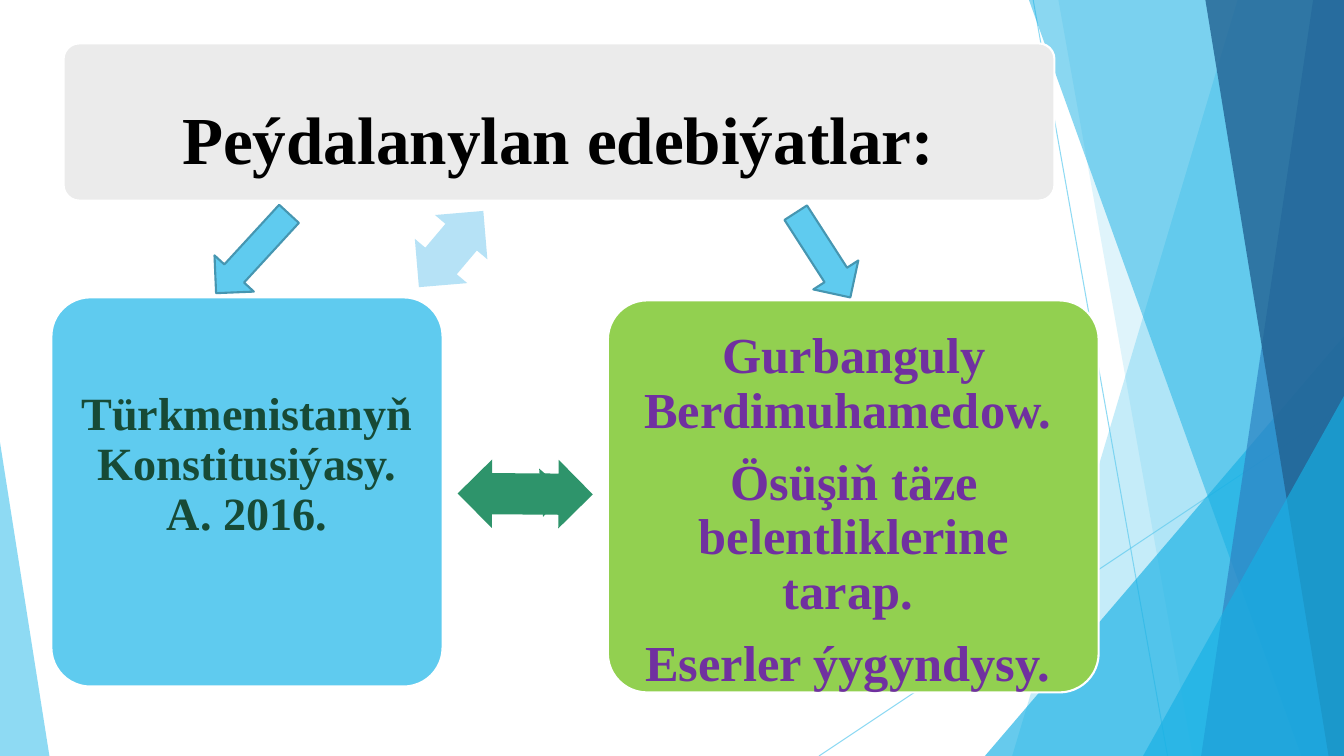
"""Builds the literature slide: a heading above two linked reference cards."""
from dataclasses import dataclass

from lxml import etree
from pptx import Presentation
from pptx.dml.color import RGBColor
from pptx.enum.shapes import MSO_CONNECTOR, MSO_SHAPE
from pptx.enum.text import MSO_ANCHOR, MSO_AUTO_SIZE, PP_ALIGN
from pptx.oxml.ns import qn
from pptx.util import Pt

ROUND = MSO_SHAPE.ROUNDED_RECTANGLE
TRIANGLE = MSO_SHAPE.ISOSCELES_TRIANGLE
DOUBLE_ARROW = MSO_SHAPE.LEFT_RIGHT_ARROW
DOWN_ARROW = MSO_SHAPE.DOWN_ARROW
STRAIGHT = MSO_CONNECTOR.STRAIGHT
TOP = MSO_ANCHOR.TOP
NO_FIT = MSO_AUTO_SIZE.NONE
CENTER = PP_ALIGN.CENTER
WIDTH, HEIGHT = 960, 540


@dataclass(frozen=True)
class Theme:
    """Colours, font and type sizes."""
    font: str = "Times New Roman"
    sky: str = "5FCBEF"
    azure: str = "17B0E4"
    blue: str = "2E83C3"
    navy: str = "226292"
    grey: str = "EBEBEB"
    white: str = "FFFFFF"
    lime: str = "92D050"
    green: str = "2E946B"
    pale: str = "B6E2F6"
    outline: str = "4696B1"
    black: str = "000000"
    forest: str = "174A36"
    purple: str = "7030A0"
    title_size: int = 48
    left_size: int = 33
    right_size: int = 36


class SlideBuilder:
    """Draws styled elements on one slide."""

    def __init__(self, s, theme):
        """Keep the slide and its theme."""
        self.s = s
        self.theme = theme

    def paint(self, fill, color, alpha=100):
        """Apply a solid colour with an opacity in percent."""
        fill.solid()
        fill.fore_color.rgb = RGBColor.from_string(color)
        if alpha < 100:
            clr = fill._xPr.find(".//" + qn("a:srgbClr"))
            etree.SubElement(clr, qn("a:alpha"), val=str(alpha * 1000))

    def finish(self, sp, color, alpha=100, line=None):
        """Set the fill and outline of a shape."""
        sp.shadow.inherit = False
        self.paint(sp.fill, color, alpha)
        if line:
            self.paint(sp.line.fill, line)
            sp.line.width = Pt(1.5)
        else:
            sp.line.fill.background()

    def shape(self, kind, box, color, alpha=100, line=None, adj=(), rot=0):
        """Add a preset shape."""
        sp = self.s.shapes.add_shape(kind, *map(Pt, box))
        for i, value in enumerate(adj):
            sp.adjustments[i] = value
        sp.rotation = rot
        self.finish(sp, color, alpha, line)

    def stripe(self, top_x, bottom_x, color, alpha):
        """Add a slanted band that reaches the right edge."""
        fb = self.s.shapes.build_freeform(Pt(top_x), Pt(0))
        corners = [(WIDTH, 0), (WIDTH, HEIGHT), (bottom_x, HEIGHT)]
        fb.add_line_segments([(Pt(x), Pt(y)) for x, y in corners])
        self.finish(fb.convert_to_shape(), color, alpha)

    def line(self, *ends):
        """Add a thin translucent line."""
        c = self.s.shapes.add_connector(STRAIGHT, *map(Pt, ends))
        self.paint(c.line.fill, self.theme.sky, 70)
        c.line.width = Pt(0.75)
        etree.SubElement(c._element.spPr, qn("a:effectLst"))

    def text(self, idx, box, lines, size, color):
        """Fill a placeholder and bring it to the front."""
        sp = self.s.placeholders[idx]
        sp.left, sp.top, sp.width, sp.height = map(Pt, box)
        tf = sp.text_frame
        tf.text = "\n".join(lines)
        tf.word_wrap = True
        tf.auto_size = NO_FIT
        tf.vertical_anchor = TOP
        tf.margin_left = tf.margin_right = tf.margin_top = tf.margin_bottom = 0
        for p in tf.paragraphs:
            p.alignment = CENTER
            p.line_spacing = 0.9
            p.space_before = Pt(0)
            p.space_after = Pt(0.35 * size)
            pPr = p._p.get_or_add_pPr()
            pPr.set("marL", "0")
            pPr.set("indent", "0")
            etree.SubElement(pPr, qn("a:buNone"))
            for r in p.runs:
                r.font.name = self.theme.font
                r.font.size = Pt(size)
                r.font.bold = True
                r.font.color.rgb = RGBColor.from_string(color)
        self.s.shapes._spTree.append(sp._element)


def main():
    """Build and save the slide."""
    prs = Presentation()
    prs.slide_width, prs.slide_height = Pt(WIDTH), Pt(HEIGHT)
    t = Theme()
    b = SlideBuilder(prs.slides.add_slide(prs.slide_layouts[3]), t)

    b.line(738, 0, 834, HEIGHT)
    b.line(WIDTH, 290, 585, HEIGHT)
    b.stripe(884, 723, t.sky, 36)
    b.stripe(756, 852, t.sky, 20)
    b.shape(TRIANGLE, (703.5, 240, 256.5, 300), t.azure, 66, adj=[1])
    b.stripe(735, 929.5, t.azure, 50)
    b.stripe(938, 858, t.blue, 70)
    b.stripe(861, 949, t.navy, 80)
    b.shape(TRIANGLE, (816.5, 283, 143.5, 257), t.azure, 66, adj=[1])
    b.shape(TRIANGLE, (0, 316, 35.3, 224), t.sky, 70, adj=[0])

    cards = [
        ((45.4, 31, 707.8, 112.3), t.grey),
        ((434.2, 214.6, 350.6, 280), t.lime),
        ((36.7, 212.4, 279.4, 278), t.sky),
    ]
    for box, color in cards:
        b.shape(ROUND, box, color, line=t.white, adj=[0.1])

    links = [
        ((331.9, 336.2, 72, 34.6), 355.4, t.green),
        ((326.9, 328.3, 96.5, 49), 180.4, t.green),
        ((286.6, 153.4, 71.3, 49), 310.2, t.pale),
    ]
    for box, rot, color in links:
        b.shape(DOUBLE_ARROW, box, color, adj=[0.6, 0.5], rot=rot)

    pointers = [((161.3, 142.6, 38.2, 77), 42.6), ((568.8, 146.2, 38.2, 72), 327.2)]
    for box, rot in pointers:
        b.shape(DOWN_ARROW, box, t.sky, line=t.outline, rot=rot)

    b.text(0, (62.6, 76, 672.5, 56), ["Peýdalanylan edebiýatlar:"],
           t.title_size, t.black)
    b.text(1, (54.7, 279, 243.4, 120),
           ["Türkmenistanyň Konstitusiýasy. A. 2016."], t.left_size, t.forest)
    b.text(2, (453.6, 236, 313.2, 258),
           ["Gurbanguly Berdimuhamedow. ",
            "Ösüşiň täze belentliklerine tarap. ",
            "Eserler ýygyndysy. "], t.right_size, t.purple)
    prs.save("out.pptx")


if __name__ == "__main__":
    main()
